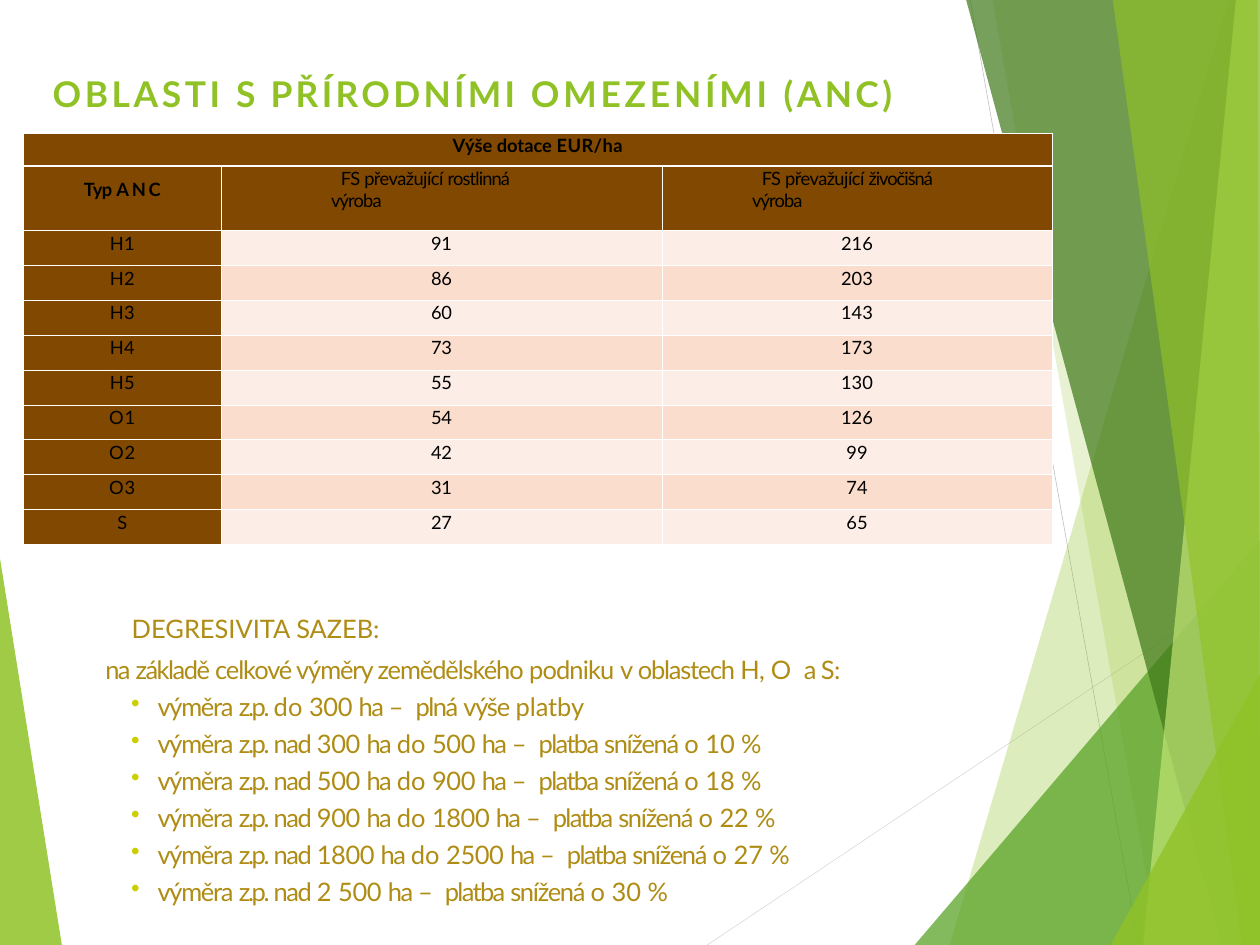
from lxml.etree import SubElement
from pptx import Presentation
from pptx.dml.color import RGBColor
from pptx.enum.shapes import MSO_CONNECTOR
from pptx.enum.text import PP_ALIGN
from pptx.oxml.ns import qn
from pptx.util import Inches, Pt

WIDTH, HEIGHT = Inches(21.99), Inches(16.49)
COLUMNS, ROWS = 22, 16.5
FONT = "Lato"
GREEN, GOLD, BULLET, BROWN = "90C226", "AF8C14", "CDCE00", "804800"
BLACK, WHITE, BANDS = "000000", "FFFFFF", ("FCEEE7", "FADDCC")

# Letter spacing in points of each word; words not listed have none
SPACING = {
    "OBLASTI": 4.5, "S": 4, "PŘÍRODNÍMI": 4.2, "OMEZENÍMI": 4.8, "(ANC)": 4.3,
    "EUR/ha": 0.5, "Typ": -0.6, "ANC": 3.4, "FS": -0.8, "převažující": -0.7,
    "rostlinná": -1.1, "živočišná": -1.3, "výroba": -1.1, "SAZEB:": -0.1,
    "na": -2, "základě": -1.9, "celkové": -1.4, "výměry": -1.4,
    "zemědělského": -1.4, "podniku": -1.1, "v": -1.5, "oblastech": -1.6,
    "H,": -0.9, "O": 3.8, "a": -2.6, "S:": -0.8, "výměra": -1.6, "z.p.": -3,
    "nad": -1.9, "ha": -2, "–": 3.4, "plná": -1.9, "výše": -1.5,
    "platby": -0.1, "platba": -2.1, "snížená": -1.7, "%": 1.4,
    "300": -0.5, "500": -0.5, "900": -0.5, "1800": -0.6, "2500": -0.6,
    "10": -0.2, "18": -0.2, "22": -0.3, "27": -0.2, "30": -0.1,
}

# Outline, colour and opacity of each background facet
LEFT_FACET = ([(0, 9.75), (1.08, 16.5), (0, 16.5)], GREEN, 85)
RIGHT_FACETS = [
    ([(21.45, 0), (16.58, 16.5), (22, 16.5), (22, 0)], GREEN, 30),
    ([(17.33, 0), (20.23, 16.5), (22, 16.5), (22, 0)], GREEN, 20),
    ([(15.97, 16.5), (22, 9.43), (22, 16.5)], "54A021", 72),
    ([(16.87, 0), (21.33, 16.5), (22, 16.5), (22, 0)], "3F7819", 70),
    ([(21.58, 0), (19.96, 16.5), (22, 16.5), (22, 0)], "C0E474", 70),
    ([(19.43, 0), (21.69, 16.5), (22, 16.5), (21.96, 0)], GREEN, 65),
    ([(19.39, 16.5), (22, 11.77), (22, 16.5)], GREEN, 80),
]
RATES = [
    ("H1", 91, 216), ("H2", 86, 203), ("H3", 60, 143), ("H4", 73, 173),
    ("H5", 55, 130), ("O1", 54, 126), ("O2", 42, 99), ("O3", 31, 74), ("S", 27, 65),
]
REDUCTIONS = [("300 ha do 500", 10), ("500 ha do 900", 18), ("900 ha do 1800", 22),
              ("1800 ha do 2500", 27), ("2 500", 30)]


def color(value):
    return RGBColor.from_string(value)


def write(paragraph, text, size=23, ink=BLACK, bold=False, align=PP_ALIGN.LEFT,
          before=2.1, left=0, indent=0, bullet=None, spacing=None):
    """Write text word by word, each with its own letter spacing."""
    paragraph.alignment = align
    paragraph.space_before = Pt(before)
    properties = paragraph._p.get_or_add_pPr()
    properties.set("marL", str(Inches(left)))
    properties.set("indent", str(Inches(indent)))
    if bullet:
        holder = SubElement(properties, qn("a:buClr"))
        SubElement(holder, qn("a:srgbClr"), val=bullet)
        SubElement(properties, qn("a:buChar"), char="•")
    words = text.split()
    for number, word in enumerate(words, 1):
        run = paragraph.add_run()
        run.text = word if number == len(words) else word + " "
        run.font.name, run.font.size, run.font.bold = FONT, Pt(size), bold
        run.font.color.rgb = color(ink)
        points = SPACING.get(word, 0) if spacing is None else spacing
        run._r.get_or_add_rPr().set("spc", str(round(points * 100)))


class SlideBuilder:
    def __init__(self, slide):
        self.slide = slide

    def x(self, columns):
        return round(columns * WIDTH / COLUMNS)

    def y(self, rows):
        return round(rows * HEIGHT / ROWS)

    def place(self, left, top, width, height):
        return self.x(left), self.y(top), self.x(width), self.y(height)

    def facet(self, points, fill, opacity):
        corners = [(self.x(column), self.y(row)) for column, row in points]
        builder = self.slide.shapes.build_freeform(*corners[0])
        builder.add_line_segments(corners[1:])
        shape = builder.convert_to_shape()
        shape.shadow.inherit = False
        shape.line.fill.background()
        shape.fill.solid()
        shape.fill.fore_color.rgb = color(fill)
        for tint in shape.element.spPr.iter(qn("a:srgbClr")):
            SubElement(tint, qn("a:alpha"), val=str(opacity * 1000))

    def line(self, start, end, ink):
        connector = self.slide.shapes.add_connector(
            MSO_CONNECTOR.STRAIGHT, self.x(start[0]), self.y(start[1]),
            self.x(end[0]), self.y(end[1]))
        connector.line.color.rgb = color(ink)
        connector.line.width = Pt(0.75)
        SubElement(connector.element.spPr, qn("a:effectLst"))

    def text(self, place, paragraphs, inset=0):
        frame = self.slide.shapes.add_textbox(*self.place(*place)).text_frame
        frame.word_wrap = True
        frame.margin_left = frame.margin_right = frame.margin_bottom = 0
        frame.margin_top = Inches(inset)
        for number, (text, style) in enumerate(paragraphs):
            paragraph = frame.add_paragraph() if number else frame.paragraphs[0]
            write(paragraph, text, **style)

    def table(self, place, widths, heights):
        table = self.slide.shapes.add_table(
            len(heights), len(widths), *self.place(*place)).table
        table.horz_banding = False
        for column, width in zip(table.columns, widths):
            column.width = self.x(width)
        for row, height in zip(table.rows, heights):
            row.height = self.y(height)
        return table

    def cell(self, cell, text, fill, top=0.03, right=0, rule_above=1, rule_below=1, **style):
        cell.margin_left = cell.margin_bottom = 0
        cell.margin_top, cell.margin_right = Inches(top), Inches(right)
        borders = {"a:lnL": 1, "a:lnR": 1, "a:lnT": rule_above, "a:lnB": rule_below}
        for side, points in borders.items():
            border = SubElement(cell._tc.get_or_add_tcPr(), qn(side), w=str(Pt(points)))
            SubElement(SubElement(border, qn("a:solidFill")), qn("a:srgbClr"), val=WHITE)
        cell.fill.solid()
        cell.fill.fore_color.rgb = color(fill)
        write(cell.text_frame.paragraphs[0], text, **style)


def main():
    presentation = Presentation()
    presentation.slide_width, presentation.slide_height = WIDTH, HEIGHT
    builder = SlideBuilder(presentation.slides.add_slide(presentation.slide_layouts[6]))

    # Background facets and thin lines
    builder.facet(*LEFT_FACET)
    builder.line((12.35, 16.5), (22, 10.05), "D9D9D9")
    builder.line((16.94, 0), (19.88, 16.5), "BFBFBF")
    for facet in RIGHT_FACETS:
        builder.facet(*facet)

    # Title
    title = {"size": 44.5, "ink": GREEN, "bold": True, "before": 1, "left": 0.01}
    builder.text((0.91, 1.25, 15.92, 0.76),
                 [("OBLASTI S PŘÍRODNÍMI OMEZENÍMI (ANC)", title)], inset=0.01)

    # Rate reductions by farm area
    body = {"size": 32, "ink": GOLD}
    item = {**body, "before": 8.1, "left": 0.92, "indent": -0.46, "bullet": BULLET}
    paragraphs = [
        ("DEGRESIVITA SAZEB:", {**body, "before": 14.2, "left": 0.47}),
        ("na základě celkové výměry zemědělského podniku v oblastech H, O a S:",
         {**body, "before": 13.2, "left": 0.01}),
        ("výměra z.p. do 300 ha – plná výše platby", item),
    ]
    paragraphs += [(f"výměra z.p. nad {area} ha – platba snížená o {cut} %", item)
                   for area, cut in REDUCTIONS]
    builder.text((1.83, 10.5, 15.43, 5.36), paragraphs, inset=0.2)

    # Table headings
    table = builder.table((0.41, 2.32, 17.97, 7.19), (3.45, 7.7, 6.81),
                          [0.58, 1.12] + [0.61] * len(RATES))
    table.cell(0, 0).merge(table.cell(0, 2))
    centred = {"align": PP_ALIGN.CENTER}
    for column, text in enumerate(("Výše dotace EUR/ha", "", "")):
        builder.cell(table.cell(0, column), text, BROWN, rule_below=3, bold=True, **centred)
    builder.cell(table.cell(1, 0), "Typ ANC", BROWN, top=0.22, rule_above=3,
                 before=16, bold=True, **centred)
    for column, kind, left, right in ((1, "rostlinná", 1.92, 2), (2, "živočišná", 1.57, 1.5)):
        builder.cell(table.cell(1, column), f"FS převažující {kind} výroba", BROWN,
                     right=right, rule_above=3, left=left, indent=0.17)

    # Table rates
    for row, rates in enumerate(RATES):
        band = BANDS[row % 2]
        code_spacing = {"H": 0.2, "O": 1.1, "S": 0}[rates[0][0]]
        for column, (value, fill, spacing) in enumerate(
                zip(rates, (BROWN, band, band), (code_spacing, -0.2, 0))):
            builder.cell(table.cell(row + 2, column), str(value), fill,
                         spacing=spacing, **centred)

    presentation.save("out.pptx")


if __name__ == "__main__":
    main()
